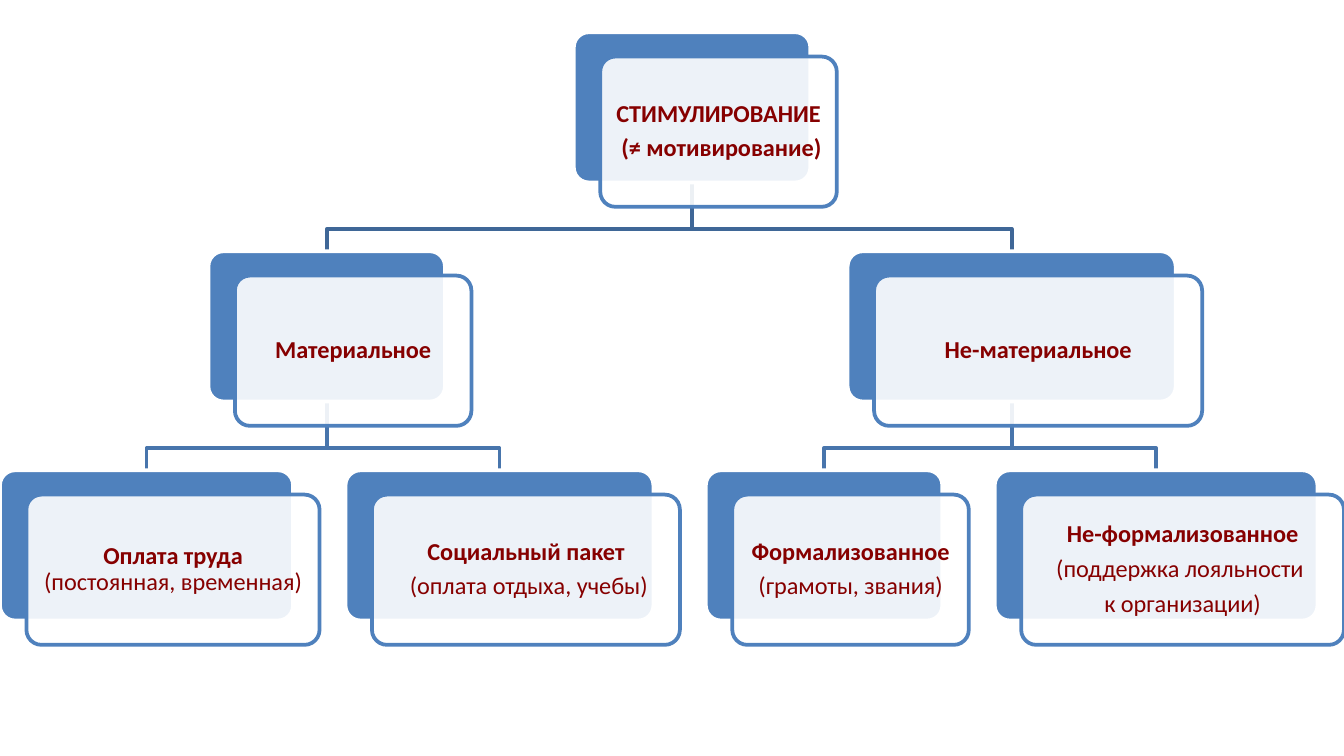
from dataclasses import dataclass, field

from lxml import etree
from pptx import Presentation
from pptx.dml.color import RGBColor
from pptx.enum.shapes import MSO_SHAPE as Preset
from pptx.enum.text import MSO_ANCHOR as Anchor, PP_ALIGN as Align
from pptx.oxml.ns import qn
from pptx.util import Cm, Pt

COLORS = {
    "box": "4F81BD",
    "paper": "FFFFFF",
    "text": "860000",
    "upper_link": "3F6797",
    "lower_link": "4875AC",
}
LINK_COLORS = ["upper_link", "lower_link"]
LINE_WIDTH = Pt(2)

# Lengths in centimetres
TOP, LEVEL_STEP, LEAF_GAP = 0.61, 4.14, 0.99
BOX_HEIGHT, BEND_DROP = 2.84, 0.88
SHIFT_X, SHIFT_Y = 0.5, 0.46
INSET = 0.13

TEXT_FRAME_FORMAT = {
    "word_wrap": True,
    "vertical_anchor": Anchor.MIDDLE,
    "margin_left": Cm(INSET),
    "margin_right": Cm(INSET),
    "margin_top": Cm(INSET),
    "margin_bottom": Cm(INSET),
}
PARAGRAPH_FORMAT = {
    "alignment": Align.CENTER,
    "line_spacing": 0.9,
    "space_after": Pt(4.5),
}
FONT_FORMAT = {"name": "Calibri", "size": Pt(13)}


@dataclass
class Node:
    """A box; each paragraph is a list of (text, bold) runs."""
    width: float
    paragraphs: list
    children: list = field(default_factory=list)
    left: float = 0
    top: float = 0

    @property
    def center(self):
        return self.left + self.width / 2


TREE = Node(4.47, [[("СТИМУЛИРОВАНИЕ", True)], [(" (≠ мотивирование)", True)]], [
    Node(4.47, [[("Материальное", True)]], [
        Node(5.54, [[("Оплата труда ", True), ("(постоянная, временная)", False)]]),
        Node(5.82, [[("Социальный пакет", True)],
                    [(" ", True), ("(оплата отдыха, учебы)", False)]]),
    ]),
    Node(6.2, [[("Не-материальное", True)]], [
        Node(4.47, [[("Формализованное", True)], [("(грамоты, звания)", False)]]),
        Node(6.1, [[("Не-формализованное", True)],
                   [("(поддержка лояльности ", False)],
                   [("к организации)", False)]]),
    ]),
])


def apply_format(target, values):
    for name, value in values.items():
        setattr(target, name, value)


def color(name):
    return RGBColor.from_string(COLORS[name])


def place(node, left, top):
    """Set leaves side by side and center parents; return the next free left."""
    node.top = top
    if not node.children:
        node.left = left
        return left + node.width + LEAF_GAP
    for child in node.children:
        left = place(child, left, top + LEVEL_STEP)
    first, last = node.children[0], node.children[-1]
    node.left = (first.left + last.left + last.width - node.width) / 2
    return left


def add_link(slide, parent, child, color_name):
    """Draw the bent line from a parent's bottom to a child's top."""
    start_y = parent.top + BOX_HEIGHT
    bend_y = start_y + BEND_DROP
    builder = slide.shapes.build_freeform(Cm(parent.center), Cm(start_y))
    bends = [(parent.center, bend_y), (child.center, bend_y), (child.center, child.top)]
    builder.add_line_segments([(Cm(x), Cm(y)) for x, y in bends], close=False)
    shape = builder.convert_to_shape()
    shape.shadow.inherit = False
    shape.fill.background()
    shape.line.color.rgb = color(color_name)
    shape.line.width = LINE_WIDTH


def add_links(slide, node, level=0):
    for child in node.children:
        add_links(slide, child, level + 1)
        add_link(slide, node, child, LINK_COLORS[level])


def add_panel(slide, left, top, width, fill_name, line_name):
    shape = slide.shapes.add_shape(
        Preset.ROUNDED_RECTANGLE, Cm(left), Cm(top), Cm(width), Cm(BOX_HEIGHT))
    shape.adjustments[0] = 0.1
    shape.shadow.inherit = False
    shape.fill.solid()
    shape.fill.fore_color.rgb = color(fill_name)
    shape.line.color.rgb = color(line_name)
    shape.line.width = LINE_WIDTH
    return shape


def set_opacity(shape, percent):
    fill_color = shape.element.spPr.find(qn("a:solidFill"))[0]
    etree.SubElement(fill_color, qn("a:alpha"), val=str(percent * 1000))


def write_text(shape, paragraphs):
    text_frame = shape.text_frame
    apply_format(text_frame, TEXT_FRAME_FORMAT)
    for index, runs in enumerate(paragraphs):
        paragraph = text_frame.add_paragraph() if index else text_frame.paragraphs[0]
        apply_format(paragraph, PARAGRAPH_FORMAT)
        for text, bold in runs:
            run = paragraph.add_run()
            run.text = text
            apply_format(run.font, {**FONT_FORMAT, "bold": bold})
            run.font.color.rgb = color("text")


def add_boxes(slide, node):
    """Draw the node's back panel and text card, then its descendants."""
    add_panel(slide, node.left, node.top, node.width, "box", "paper")
    card = add_panel(slide, node.left + SHIFT_X, node.top + SHIFT_Y,
                     node.width, "paper", "box")
    set_opacity(card, 90)
    write_text(card, node.paragraphs)
    for child in node.children:
        add_boxes(slide, child)


def main():
    presentation = Presentation()
    presentation.slide_width = Cm(25.4)
    presentation.slide_height = Cm(14.29)
    slide = presentation.slides.add_slide(presentation.slide_layouts[6])
    place(TREE, 0, TOP)
    add_links(slide, TREE)
    add_boxes(slide, TREE)
    presentation.save("out.pptx")


if __name__ == "__main__":
    main()
